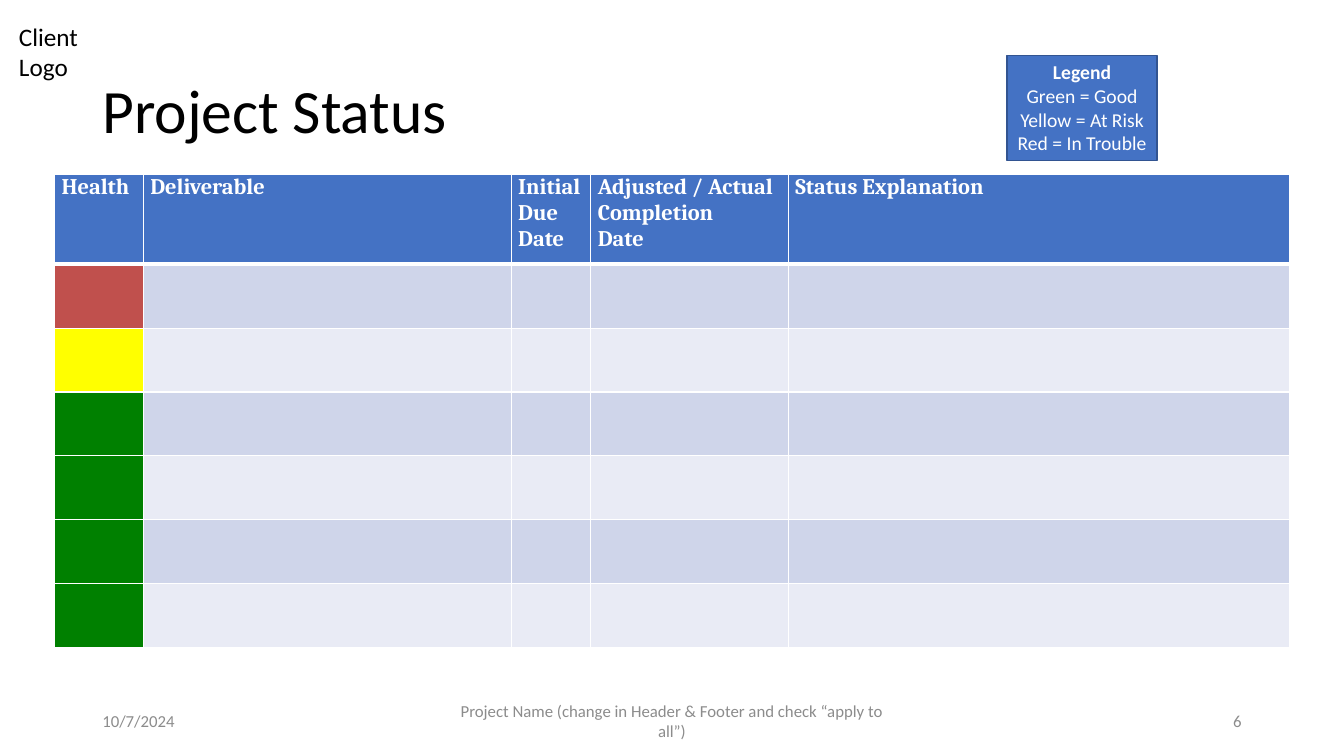
"""Build a project status slide with a health table and a legend."""
import pptx
import pptx.dml.color
import pptx.enum.shapes
import pptx.enum.text
import pptx.oxml
import pptx.oxml.ns
import pptx.util

Pt = pptx.util.Pt
RGBColor = pptx.dml.color.RGBColor
ALIGN = pptx.enum.text.PP_ALIGN
ANCHOR = pptx.enum.text.MSO_ANCHOR

BLACK = RGBColor(0x00, 0x00, 0x00)
WHITE = RGBColor(0xFF, 0xFF, 0xFF)
GRAY = RGBColor(0x8C, 0x8C, 0x8C)
BLUE = RGBColor(0x44, 0x72, 0xC4)
DARK_BLUE = RGBColor(0x32, 0x54, 0x91)
BANDS = [RGBColor(0xCF, 0xD5, 0xEA), RGBColor(0xE9, 0xEB, 0xF5)]
RED = RGBColor(0xC0, 0x50, 0x4D)
YELLOW = RGBColor(0xFF, 0xFF, 0x00)
GREEN = RGBColor(0x00, 0x80, 0x00)

CLIENT = "Client\vLogo"
TITLE = "Project Status"
LEGEND = ["Legend", "Green = Good", "Yellow = At Risk", "Red = In Trouble"]
COLUMNS = [
    ("Health", 63.4),
    ("Deliverable", 262.8),
    ("Initial\nDue\nDate", 56.9),
    ("Adjusted / Actual\nCompletion\nDate", 141.1),
    ("Status Explanation", 357.8),
]
HEALTH = [RED, YELLOW, GREEN, GREEN, GREEN, GREEN]
HEADER_HEIGHT, ROW_HEIGHT = 64, 45.6
FOOTER = [
    ("10/7/2024", 66, 216, ALIGN.LEFT),
    ("Project Name (change in Header & Footer and check “apply to all”)", 318, 324, ALIGN.CENTER),
    ("6", 678, 216, ALIGN.RIGHT),
]


def write(frame, text, size=18, color=BLACK, font="Calibri", bold=False, align=ALIGN.LEFT, spacing=None):
    """Fill a text frame with one paragraph per line, all in one format."""
    frame.text = text
    for para in frame.paragraphs:
        para.alignment = align
        para.line_spacing = spacing
        for span in para.runs:
            span.font.size = Pt(size)
            span.font.name = font
            span.font.bold = bold
            span.font.color.rgb = color


def add_text(page, text, left, top, width, height, anchor=ANCHOR.MIDDLE, **style):
    """Add a wrapping text box."""
    box = page.shapes.add_textbox(Pt(left), Pt(top), Pt(width), Pt(height))
    box.text_frame.word_wrap = True
    box.text_frame.vertical_anchor = anchor
    write(box.text_frame, text, **style)


def fill_cell(cell, color, top=1, bottom=1):
    """Set a cell's fill and its white borders."""
    properties = cell._tc.get_or_add_tcPr()
    for side, width in (("L", 1), ("R", 1), ("T", top), ("B", bottom)):
        properties.append(pptx.oxml.parse_xml(
            f'<a:ln{side} {pptx.oxml.ns.nsdecls("a")} w="{Pt(width)}">'
            f'<a:solidFill><a:srgbClr val="{WHITE}"/></a:solidFill></a:ln{side}>'))
    cell.fill.solid()
    cell.fill.fore_color.rgb = color


def add_status_table(page):
    """Add the table with a header and one row per health colour."""
    widths = [width for _, width in COLUMNS]
    heights = [HEADER_HEIGHT] + [ROW_HEIGHT] * len(HEALTH)
    table = page.shapes.add_table(len(heights), len(widths), Pt(39), Pt(124.8),
                                  Pt(sum(widths)), Pt(sum(heights))).table
    table.horz_banding = False
    for row, height in zip(table.rows, heights):
        row.height = Pt(height)
    for index, (heading, width) in enumerate(COLUMNS):
        table.columns[index].width = Pt(width)
        cell = table.cell(0, index)
        cell.margin_left = cell.margin_right = Pt(5)
        cell.margin_top = cell.margin_bottom = 0
        write(cell.text_frame, heading, size=16, color=WHITE, font="Cambria", bold=True)
        fill_cell(cell, BLUE, bottom=3)
        for number, health in enumerate(HEALTH):
            color = health if index == 0 else BANDS[number % 2]
            fill_cell(table.cell(number + 1, index), color, top=3 if number == 0 else 1)


def add_legend(page):
    """Add the legend box with a bold first line."""
    box = page.shapes.add_shape(pptx.enum.shapes.MSO_SHAPE.RECTANGLE,
                                Pt(719.3), Pt(39.6), Pt(107.3), Pt(74.9))
    box.shadow.inherit = False
    box.fill.solid()
    box.fill.fore_color.rgb = BLUE
    box.line.color.rgb = DARK_BLUE
    box.line.width = Pt(1)
    frame = box.text_frame
    frame.word_wrap = False
    frame.vertical_anchor = ANCHOR.TOP
    write(frame, "\n".join(LEGEND), size=14, color=WHITE, align=ALIGN.CENTER)
    frame.paragraphs[0].runs[0].font.bold = True


def main():
    """Build and save the deck."""
    deck = pptx.Presentation()
    deck.slide_width, deck.slide_height = Pt(960), Pt(540)
    page = deck.slides.add_slide(deck.slide_layouts[6])
    add_text(page, CLIENT, 6.5, 11.5, 80, 51, anchor=ANCHOR.TOP)
    add_status_table(page)
    add_text(page, TITLE, 66, 28.8, 828, 104.4, size=44, spacing=0.9)
    for text, left, width, align in FOOTER:
        add_text(page, text, left, 500.5, width, 28.8, size=12, color=GRAY, align=align)
    add_legend(page)
    deck.save("out.pptx")


if __name__ == "__main__":
    main()
